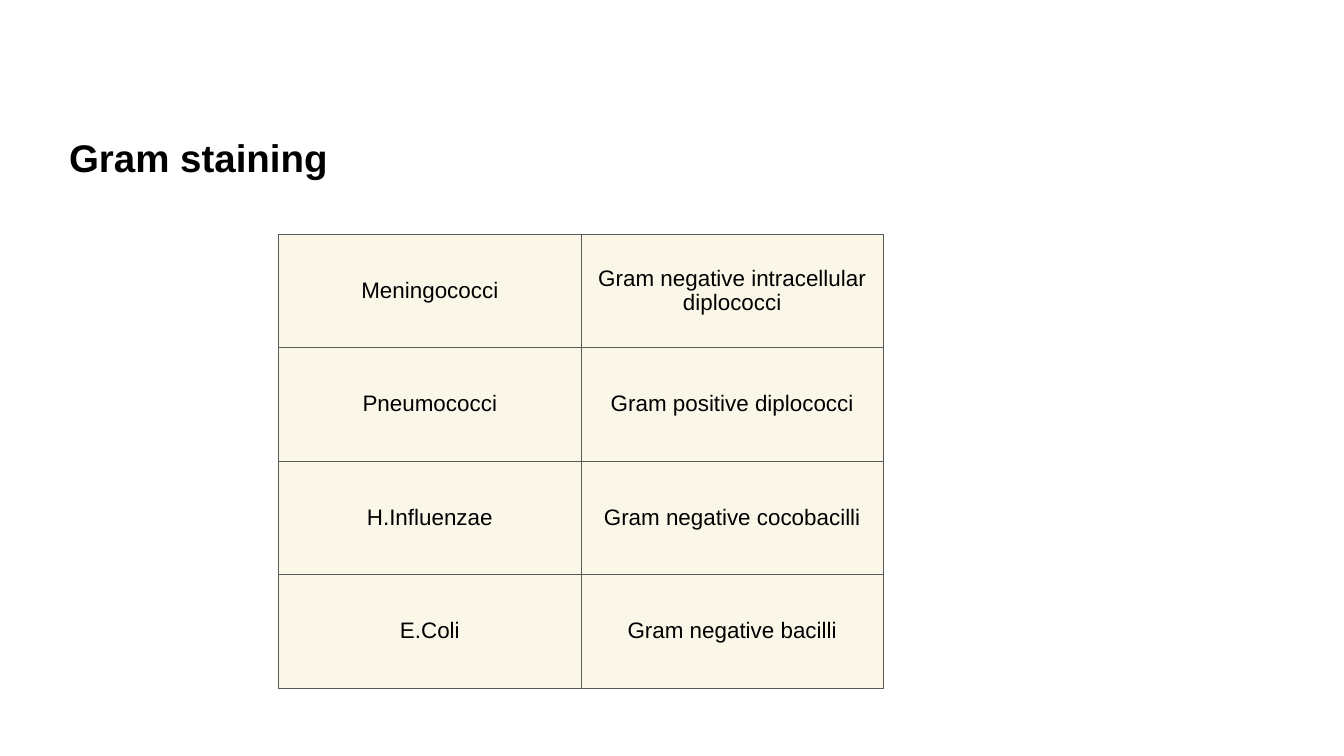
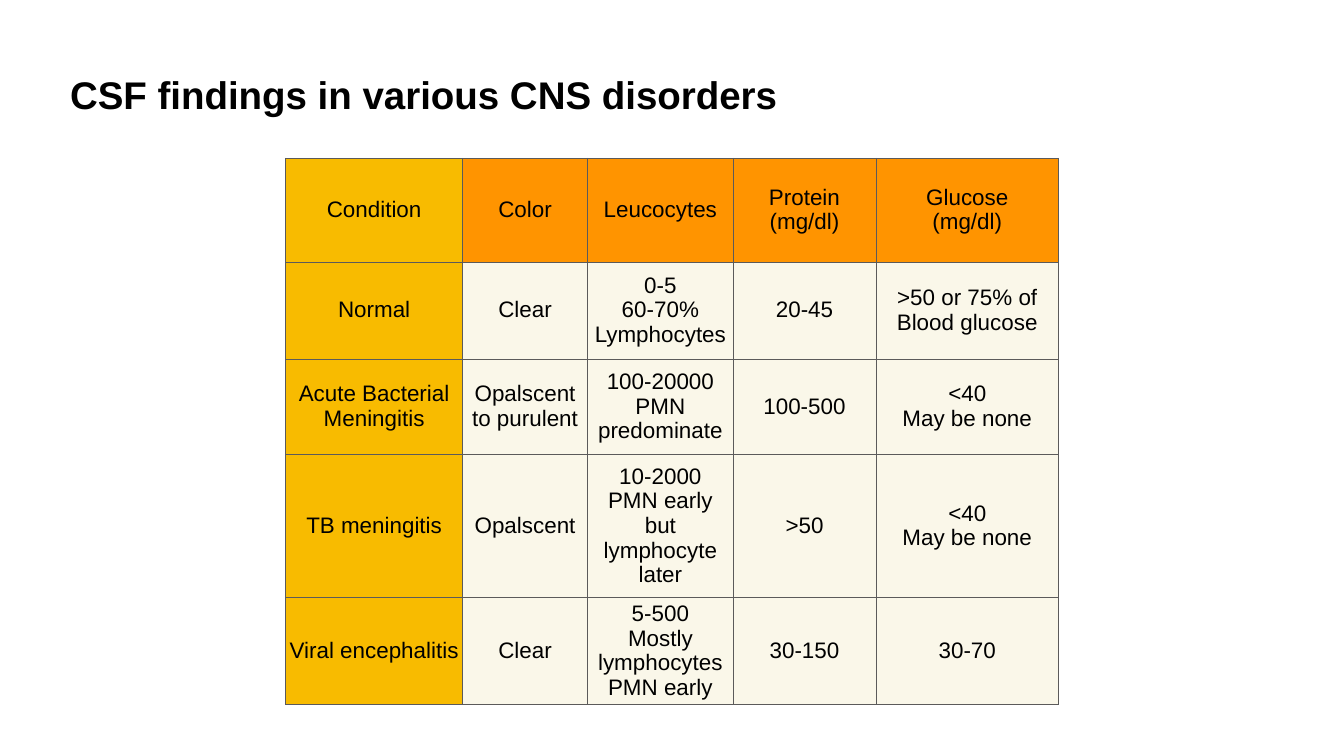
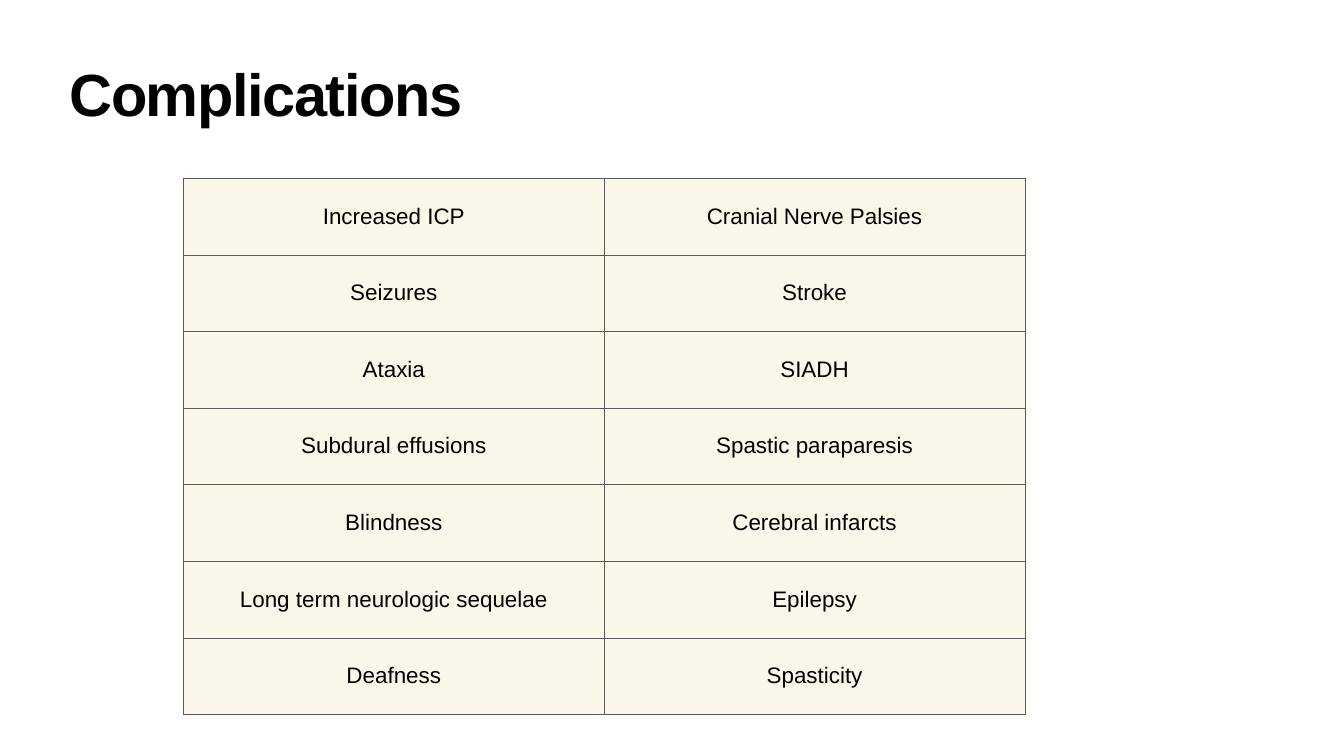
from dataclasses import dataclass

from lxml.etree import SubElement
from pptx import Presentation
from pptx.dml.color import RGBColor
from pptx.enum.text import MSO_ANCHOR as Anchor, MSO_AUTO_SIZE as AutoSize, PP_ALIGN as Align
from pptx.oxml import parse_xml
from pptx.oxml.ns import nsdecls, qn
from pptx.util import Inches, Pt


@dataclass(frozen=True)
class Theme:
    font: str = "Arial"
    ink: str = "000000"
    paper: str = "FFFFFF"
    cream: str = "FAF7E9"
    amber: str = "F8BB00"
    orange: str = "FF9400"
    rule: str = "5B5A5A"
    rule_width: float = 1
    heading_size: float = 55
    title_size: float = 85
    cell_size: float = 32
    inset: float = 0.06


THEME = Theme()


@dataclass(frozen=True)
class Heading:
    text: str
    box: tuple[float, float, float, float]
    size: float = THEME.heading_size
    line_spacing: float = 1.0
    tracking: float = 0
    inset: float = 0.05


@dataclass(frozen=True)
class Grid:
    left: float
    top: float
    columns: list[float]
    heights: list[float]
    rows: list[list[str]]
    has_headers: bool = False

    def fill_at(self, row: int, column: int) -> str:
        """Headed grids have an amber first column and an orange first row."""
        if self.has_headers and column == 0:
            return THEME.amber
        if self.has_headers and row == 0:
            return THEME.orange
        return THEME.cream


# Slide content
GRAM_STAINING = Grid(5.53, 4.65, [6] * 2, [2.25] * 4, [
    ["Meningococci", "Gram negative intracellular diplococci"],
    ["Pneumococci", "Gram positive diplococci"],
    ["H.Influenzae", "Gram negative cocobacilli"],
    ["E.Coli", "Gram negative bacilli"],
])

CSF_FINDINGS = Grid(
    5.67, 3.14, [3.51, 2.48, 2.89, 2.83, 3.63], [2.06, 1.92, 1.9, 2.84, 2.12], [
        ["Condition", "Color", "Leucocytes", "Protein\n(mg/dl)", "Glucose\n(mg/dl)"],
        ["Normal", "Clear", "0-5\n60-70%\nLymphocytes", "20-45",
         ">50 or 75% of Blood glucose"],
        ["Acute Bacterial Meningitis", "Opalscent to purulent",
         "100-20000\nPMN predominate", "100-500", "<40\nMay be none"],
        ["TB meningitis", "Opalscent", "10-2000\nPMN early but lymphocyte later",
         ">50", "<40\nMay be none"],
        ["Viral encephalitis", "Clear", "5-500\nMostly lymphocytes\nPMN early",
         "30-150", "30-70"],
    ], has_headers=True)

COMPLICATIONS = Grid(3.64, 3.54, [8.35] * 2, [1.52] * 7, [
    ["Increased ICP", "Cranial Nerve Palsies"],
    ["Seizures", "Stroke"],
    ["Ataxia", "SIADH"],
    ["Subdural effusions", "Spastic paraparesis"],
    ["Blindness", "Cerebral infarcts"],
    ["Long term neurologic sequelae", "Epilepsy"],
    ["Deafness", "Spasticity"],
])

SLIDES = [
    (Heading("Gram staining", (1.32, 2.6, 24.03, 1.02)), GRAM_STAINING),
    (Heading("CSF findings in various CNS disorders", (1.34, 1.29, 24.01, 1.14)),
     CSF_FINDINGS),
    (Heading("Complications", (1.32, 1.18, 24.03, 1.57), size=THEME.title_size,
             line_spacing=0.8, tracking=-2, inset=THEME.inset), COMPLICATIONS),
]


def write_text(frame, text: str, *, size: float, bold: bool = False,
               align: Align = Align.LEFT, line_spacing: float = 1.0,
               tracking: float = 0) -> None:
    """Write one paragraph per line of text, all in the same format."""
    frame.text = text
    frame.word_wrap = True
    for paragraph in frame.paragraphs:
        paragraph.alignment = align
        paragraph.line_spacing = line_spacing
        paragraph.space_before = Pt(0)
        for run in paragraph.runs:
            run.font.name = THEME.font
            run.font.size = Pt(size)
            run.font.bold = bold
            run.font.color.rgb = RGBColor.from_string(THEME.ink)
            if tracking:
                run.font._element.set("spc", str(round(tracking * 100)))


def set_insets(holder, inset: float) -> None:
    holder.margin_left = holder.margin_right = Inches(inset)
    holder.margin_top = holder.margin_bottom = Inches(inset)


def draw_heading(slide, heading: Heading) -> None:
    title = slide.shapes.title
    title.left, title.top, title.width, title.height = map(Inches, heading.box)
    frame = title.text_frame
    frame.auto_size = AutoSize.NONE
    frame.vertical_anchor = Anchor.MIDDLE
    set_insets(frame, heading.inset)
    write_text(frame, heading.text, size=heading.size, bold=True,
               line_spacing=heading.line_spacing, tracking=heading.tracking)


def draw_borders(cell) -> None:
    """Rule all four sides; the lines come before the fill in the cell."""
    properties = cell._tc.get_or_add_tcPr()
    for position, side in enumerate(("lnL", "lnR", "lnT", "lnB")):
        line = parse_xml(f'<a:{side} {nsdecls("a")} w="{Pt(THEME.rule_width)}"/>')
        fill = SubElement(line, qn("a:solidFill"))
        SubElement(fill, qn("a:srgbClr"), val=THEME.rule)
        properties.insert(position, line)


def draw_grid(slide, grid: Grid) -> None:
    table = slide.shapes.add_table(
        len(grid.heights), len(grid.columns), Inches(grid.left), Inches(grid.top),
        Inches(sum(grid.columns)), Inches(sum(grid.heights))).table
    table.first_row = grid.has_headers
    table.first_col = grid.has_headers
    table.horz_banding = False
    for column, width in zip(table.columns, grid.columns):
        column.width = Inches(width)
    for row, height in zip(table.rows, grid.heights):
        row.height = Inches(height)

    for row_index, entries in enumerate(grid.rows):
        for column_index, entry in enumerate(entries):
            cell = table.cell(row_index, column_index)
            cell.vertical_anchor = Anchor.MIDDLE
            set_insets(cell, THEME.inset)
            cell.fill.solid()
            cell.fill.fore_color.rgb = RGBColor.from_string(
                grid.fill_at(row_index, column_index))
            draw_borders(cell)
            write_text(cell.text_frame, entry, size=THEME.cell_size,
                       align=Align.CENTER, line_spacing=0.98)


def main() -> None:
    deck = Presentation()
    deck.slide_width, deck.slide_height = Inches(26.67), Inches(15)
    # White background shared by every slide
    background = deck.slide_master.background.fill
    background.solid()
    background.fore_color.rgb = RGBColor.from_string(THEME.paper)

    title_only = deck.slide_layouts.get_by_name("Title Only")
    for heading, grid in SLIDES:
        slide = deck.slides.add_slide(title_only)
        draw_heading(slide, heading)
        draw_grid(slide, grid)
    deck.save("out.pptx")


if __name__ == "__main__":
    main()
